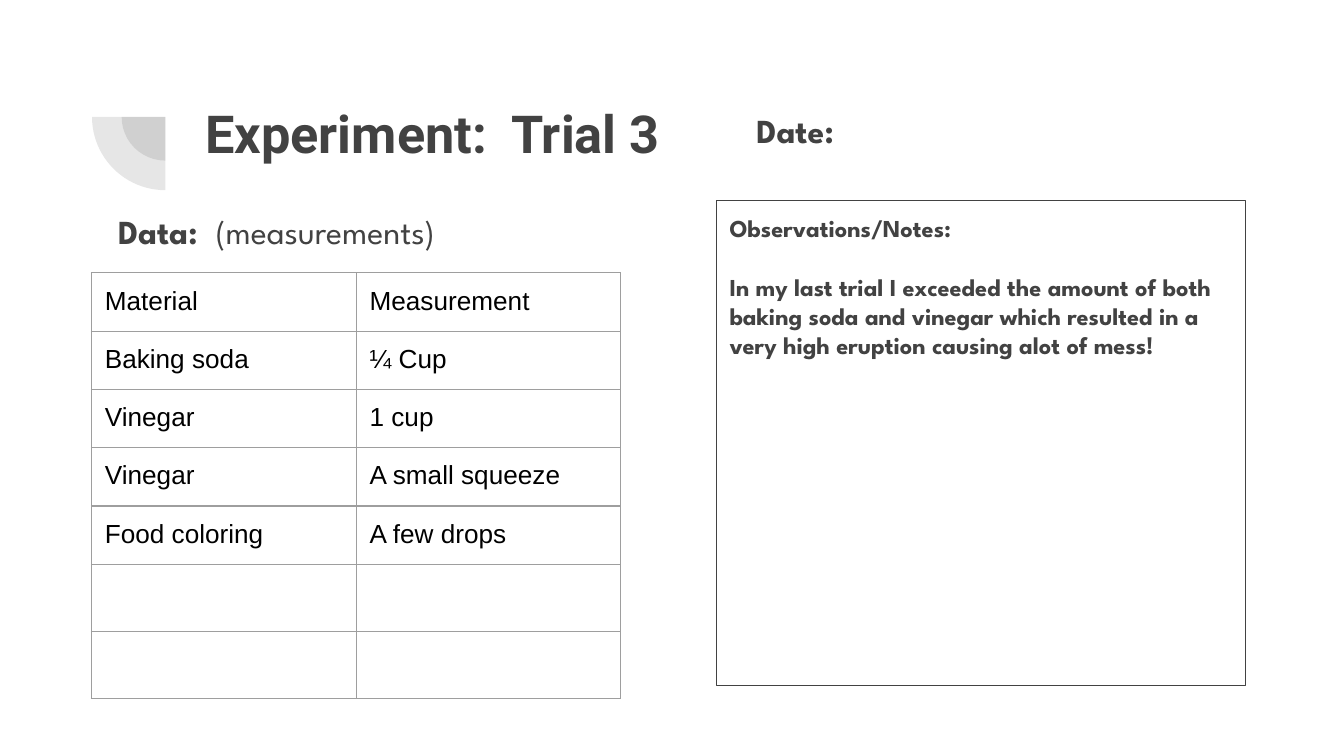
from lxml.etree import SubElement
from pptx import Presentation
from pptx.dml.color import RGBColor
from pptx.enum.shapes import MSO_SHAPE as Preset
from pptx.enum.text import MSO_ANCHOR as Anchor, PP_ALIGN as Align
from pptx.oxml.ns import qn
from pptx.util import Inches, Pt

INK = "424242"
GRID = "9E9E9E"
MEASUREMENTS = [
    ("Material", "Measurement"),
    ("Baking soda", "¼ Cup"),
    ("Vinegar", "1 cup"),
    ("Vinegar", "A small squeeze"),
    ("Food coloring", "A few drops"),
    ("", ""),
    ("", ""),
]


def color(hex_code):
    return RGBColor.from_string(hex_code)


def write(paragraph, text, size=18, font="League Spartan", ink=INK, bold=True):
    paragraph.alignment = Align.LEFT
    run = paragraph.add_run()
    run.text = text
    run.font.size = Pt(size)
    run.font.name = font
    run.font.bold = bold
    run.font.color.rgb = color(ink)


def set_margins(holder):
    holder.margin_left = holder.margin_right = Inches(0.1)
    holder.margin_top = holder.margin_bottom = Inches(0.1)


def prepare_frame(frame):
    frame.word_wrap = True
    frame.vertical_anchor = Anchor.TOP
    set_margins(frame)
    return frame.paragraphs[0]


def add_label(slide, left, top, width, height):
    label = slide.shapes.add_textbox(
        Inches(left), Inches(top), Inches(width), Inches(height))
    return prepare_frame(label.text_frame)


def add_quarter(slide, center_x, center_y, diameter):
    quarter = slide.shapes.add_shape(
        Preset.PIE, Inches(center_x - diameter / 2),
        Inches(center_y - diameter / 2), Inches(diameter), Inches(diameter))
    quarter.adjustments[0] = 108
    quarter.adjustments[1] = 162
    quarter.rotation = 270
    quarter.shadow.inherit = False
    quarter.line.fill.background()
    quarter.fill.solid()
    quarter.fill.fore_color.rgb = color(INK)
    tint = quarter.fill._xPr.find(qn("a:solidFill"))[0]
    SubElement(tint, qn("a:alpha"), val="13000")


def add_notes_panel(slide):
    panel = slide.shapes.add_shape(
        Preset.RECTANGLE, Inches(5.33), Inches(1.49), Inches(3.94), Inches(3.61))
    panel.shadow.inherit = False
    panel.fill.background()
    panel.line.color.rgb = color(INK)
    panel.line.width = Pt(0.75)
    heading = prepare_frame(panel.text_frame)
    heading.space_after = Pt(15.6)
    write(heading, "Observations/Notes:", size=13)
    write(panel.text_frame.add_paragraph(),
          "In my last trial I exceeded the amount of both baking soda and vinegar "
          "which resulted in a very high eruption causing alot of mess!", size=13)


def outline_cell(cell):
    properties = cell._tc.get_or_add_tcPr()
    for position, side in enumerate(("a:lnL", "a:lnR", "a:lnT", "a:lnB")):
        border = properties.makeelement(qn(side), {"w": str(Pt(0.75))})
        properties.insert(position, border)
        fill = SubElement(border, qn("a:solidFill"))
        SubElement(fill, qn("a:srgbClr"), val=GRID)


def add_measurements(slide):
    side = Inches(3.28)
    frame = slide.shapes.add_table(
        len(MEASUREMENTS), 2, Inches(0.68), Inches(2.03), side, side)
    table = frame.table
    table.first_row = table.horz_banding = False
    for column in table.columns:
        column.width = Inches(1.97)
    for row in table.rows:
        row.height = Pt(30)
    frame.width = frame.height = side
    for row, entries in enumerate(MEASUREMENTS):
        for column, entry in enumerate(entries):
            cell = table.cell(row, column)
            set_margins(cell)
            cell.fill.background()
            outline_cell(cell)
            if entry:
                write(cell.text_frame.paragraphs[0], entry, size=14,
                      font="Arial", ink="000000", bold=False)


def main():
    deck = Presentation()
    deck.slide_width = Inches(10)
    deck.slide_height = deck.slide_width * 9 // 16
    slide = deck.slides.add_slide(deck.slide_layouts[6])
    for diameter in (0.65, 1.09):
        add_quarter(slide, 1.23, 0.87, diameter)
    write(add_label(slide, 1.43, 0.65, 7.69, 1.09), "Experiment:  Trial 3",
          size=28, font="Roboto")
    add_notes_panel(slide)
    data = add_label(slide, 0.78, 1.47, 4.22, 0.45)
    write(data, "Data:  ")
    write(data, "(measurements)", bold=False)
    add_measurements(slide)
    write(add_label(slide, 5.53, 0.72, 4.22, 0.45), "Date:")
    deck.save("out.pptx")


if __name__ == "__main__":
    main()
